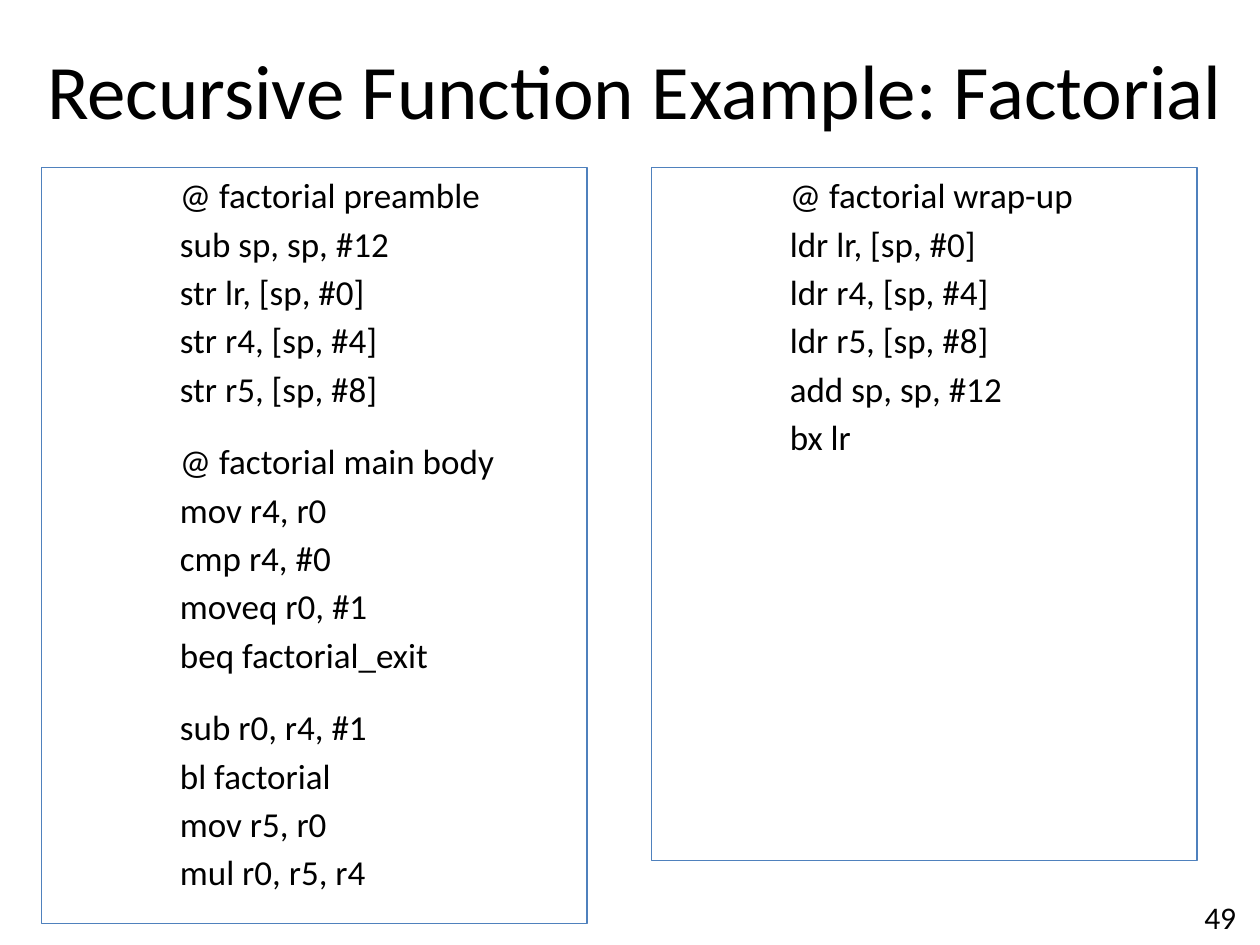
from pptx import Presentation
from pptx.dml.color import RGBColor
from pptx.enum.shapes import MSO_SHAPE as Shape
from pptx.enum.text import MSO_ANCHOR as Anchor, PP_ALIGN as Align
from pptx.util import Inches, Pt

BLACK = RGBColor(0x00, 0x00, 0x00)
BLUE = RGBColor(0x4F, 0x81, 0xBD)
FONT = "Calibri"
LEAD, GAP = 3.6, 17.6  # points above a line, and above a new block

LEFT = [
    ["@ factorial preamble", "sub sp, sp, #12", "str lr, [sp, #0]",
     "str r4, [sp, #4]", "str r5, [sp, #8]"],
    ["@ factorial main body", "mov r4, r0", "cmp r4, #0",
     "moveq r0, #1", "beq factorial_exit"],
    ["sub r0, r4, #1", "bl factorial", "mov r5, r0", "mul r0, r5, r4"],
]
RIGHT = [
    ["@ factorial wrap-up", "ldr lr, [sp, #0]", "ldr r4, [sp, #4]",
     "ldr r5, [sp, #8]", "add sp, sp, #12", "bx lr"],
]


def add_run(para, text, size):
    run = para.add_run()
    run.text = text
    font = run.font
    font.name, font.size = FONT, Pt(size)
    font.color.rgb = BLACK


def add_label(slide, text, size, box, align, anchor):
    frame = slide.shapes.add_textbox(*map(Inches, box)).text_frame
    frame.word_wrap = True
    frame.vertical_anchor = anchor
    para = frame.paragraphs[0]
    para.alignment = align
    add_run(para, text, size)


def add_code(slide, blocks, box):
    """Add a framed panel with blocks of code lines, indented by one inch."""
    panel = slide.shapes.add_shape(Shape.RECTANGLE, *map(Inches, box))
    panel.shadow.inherit = False
    panel.fill.background()
    panel.line.color.rgb = BLUE
    panel.line.width = Pt(0.75)
    frame = panel.text_frame
    frame.word_wrap = True
    frame.vertical_anchor = Anchor.TOP
    para = frame.paragraphs[0]
    for b, block in enumerate(blocks):
        for n, line in enumerate(block):
            if b or n:
                para = frame.add_paragraph()
            para.alignment = Align.LEFT
            para.space_before = Pt(GAP if b and not n else LEAD)
            para._p.get_or_add_pPr().set("marL", str(Inches(1)))
            add_run(para, line, 20)


def main():
    deck = Presentation()
    deck.slide_width, deck.slide_height = Inches(10), Inches(7.5)
    slide = deck.slides.add_slide(deck.slide_layouts[6])
    add_label(slide, "Recursive Function Example: Factorial", 44,
              (0.25, 0.08, 9.58, 1.25), Align.CENTER, Anchor.MIDDLE)
    add_code(slide, LEFT, (0.33, 1.33, 4.33, 6))
    add_label(slide, "49", 18, (7.58, 7.08, 2.33, 0.4),
              Align.RIGHT, Anchor.TOP)
    add_code(slide, RIGHT, (5.17, 1.33, 4.33, 5.5))
    deck.save("out.pptx")


if __name__ == "__main__":
    main()
